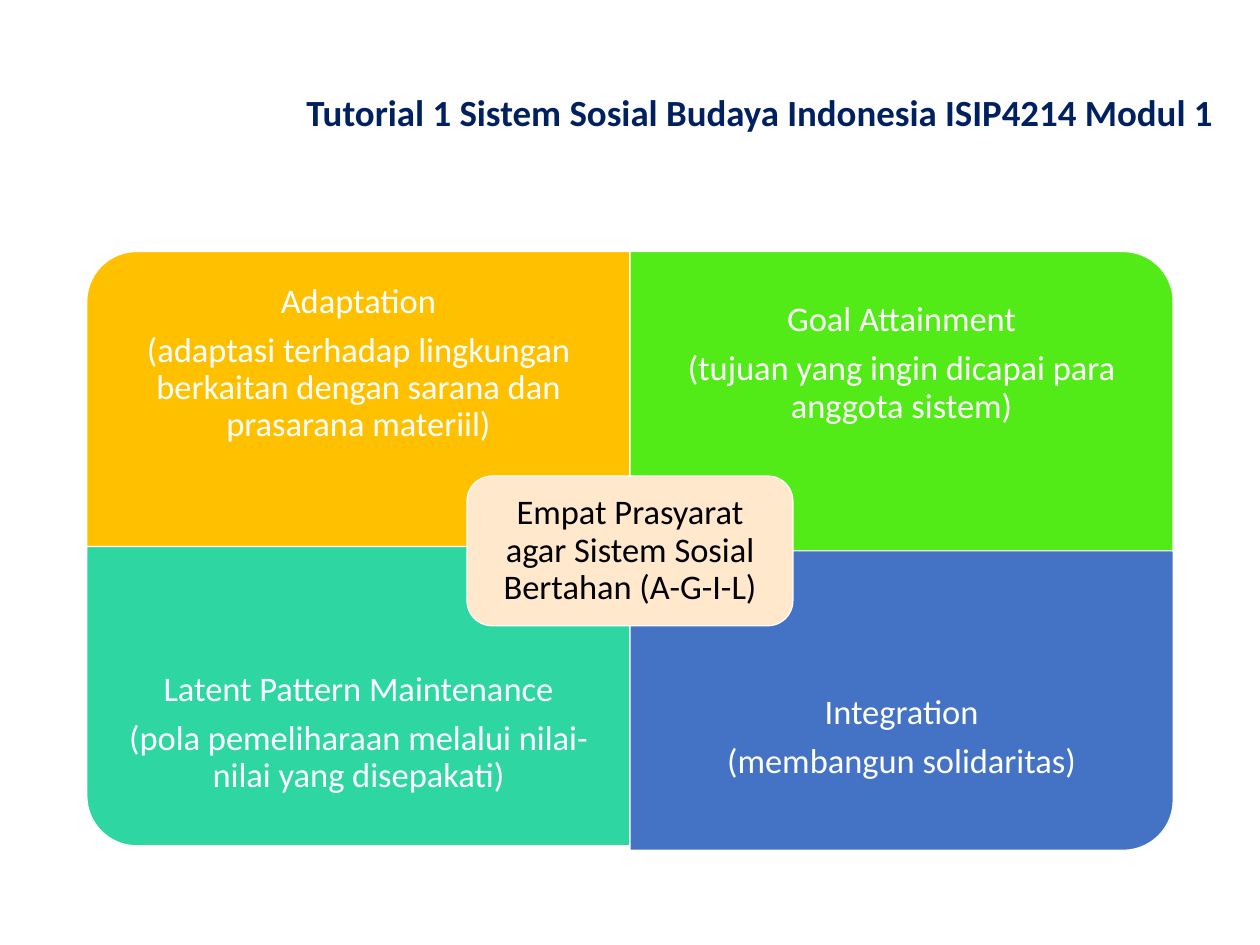
from collections import namedtuple
from dataclasses import dataclass

from pptx import Presentation
from pptx.dml.color import RGBColor
from pptx.enum.shapes import MSO_SHAPE as Preset
from pptx.enum.text import MSO_ANCHOR as Anchor, PP_ALIGN as Align
from pptx.util import Inches, Pt

Box = namedtuple("Box", "left top width height")
Quadrant = namedtuple("Quadrant", "column row turn fill lift lines")


@dataclass(frozen=True)
class Theme:
    font: str = "Calibri"
    title_size: int = 30
    body_size: int = 28
    line_spacing: float = 0.9
    space_after: float = 9.5
    title: str = "002060"
    light: str = "FFFFFF"
    dark: str = "000000"
    adaptation: str = "FFC000"
    goal: str = "53EB17"
    latency: str = "2ED7A1"
    integration: str = "4472C4"
    hub: str = "FFE8CC"


THEME = Theme()
SLIDE = Box(0, 0, 14.22, 10.67)
TITLE_BOX = Box(3.36, 0.92, SLIDE.width - 3.36, 0.75)
MATRIX_BOX = Box(0.98, 2.84, 12.26, 6.76)

TITLE = "Tutorial 1 Sistem Sosial Budaya Indonesia ISIP4214 Modul 1"
HUB = "Empat Prasyarat agar Sistem Sosial Bertahan (A-G-I-L)"
QUADRANTS = [
    Quadrant(0, 0, 270, THEME.adaptation, 0, [
        "Adaptation",
        "(adaptasi terhadap lingkungan berkaitan dengan sarana dan prasarana materiil)"]),
    Quadrant(1, 0, 0, THEME.goal, 0, [
        "Goal Attainment",
        "(tujuan yang ingin dicapai para anggota sistem)"]),
    Quadrant(0, 1, 180, THEME.latency, 0.05, [
        "Latent Pattern Maintenance",
        "(pola pemeliharaan melalui nilai-nilai yang disepakati)"]),
    Quadrant(1, 1, 90, THEME.integration, 0, [
        "Integration",
        "(membangun solidaritas)"]),
]


def emu(box):
    return [Inches(length) for length in box]


def centred(box, width, height):
    return Box(box.left + (box.width - width) / 2,
               box.top + (box.height - height) / 2, width, height)


def add_panel(slide, box, preset, fill, turn=0):
    sideways = turn % 180 == 90
    frame = centred(box, box.height, box.width) if sideways else box
    panel = slide.shapes.add_shape(preset, *emu(frame))
    panel.rotation = turn
    panel.shadow.inherit = False
    panel.fill.solid()
    panel.fill.fore_color.rgb = RGBColor.from_string(fill)
    panel.line.color.rgb = RGBColor.from_string(THEME.light)
    panel.line.width = Pt(1)


def add_text(slide, box, lines, size, colour, inset, align=Align.CENTER, bold=False):
    frame = slide.shapes.add_textbox(*emu(box)).text_frame
    frame.word_wrap = True
    frame.vertical_anchor = Anchor.MIDDLE
    frame.margin_left = frame.margin_right = Inches(inset[0])
    frame.margin_top = frame.margin_bottom = Inches(inset[1])
    frame.text = "\n".join(lines)
    for paragraph in frame.paragraphs:
        paragraph.alignment = align
        paragraph.line_spacing = THEME.line_spacing
        paragraph.space_after = Pt(THEME.space_after if len(lines) > 1 else 0)
        for run in paragraph.runs:
            run.font.name = THEME.font
            run.font.size = Pt(size)
            run.font.bold = bold
            run.font.color.rgb = RGBColor.from_string(colour)


def add_title(slide, box):
    add_text(slide, box, [TITLE], THEME.title_size, THEME.title,
             (0.1, 0.05), Align.LEFT, bold=True)


def add_quadrant(slide, matrix, quadrant):
    width, height = matrix.width / 2, matrix.height / 2
    cell = Box(matrix.left + quadrant.column * width,
               matrix.top + quadrant.row * height - quadrant.lift, width, height)
    add_panel(slide, cell, Preset.ROUND_1_RECTANGLE, quadrant.fill, quadrant.turn)
    label_height = height * 0.75
    label_top = cell.top + quadrant.row * (height - label_height)
    label = cell._replace(top=label_top, height=label_height)
    add_text(slide, label, quadrant.lines, THEME.body_size, THEME.light, (0.22, 0.22))


def add_hub(slide, matrix):
    hub = centred(matrix, matrix.width * 0.3, matrix.height * 0.25)
    add_panel(slide, hub, Preset.ROUNDED_RECTANGLE, THEME.hub)
    label = centred(hub, hub.width - 0.16, hub.height - 0.16)
    add_text(slide, label, [HUB], THEME.body_size, THEME.dark, (0.12, 0.12))


def add_matrix(slide, box):
    for quadrant in QUADRANTS:
        add_quadrant(slide, box, quadrant)
    add_hub(slide, box)


def main():
    deck = Presentation()
    deck.slide_width, deck.slide_height = Inches(SLIDE.width), Inches(SLIDE.height)
    slide = deck.slides.add_slide(deck.slide_layouts[6])
    add_matrix(slide, MATRIX_BOX)
    add_title(slide, TITLE_BOX)
    deck.save("out.pptx")


if __name__ == "__main__":
    main()
